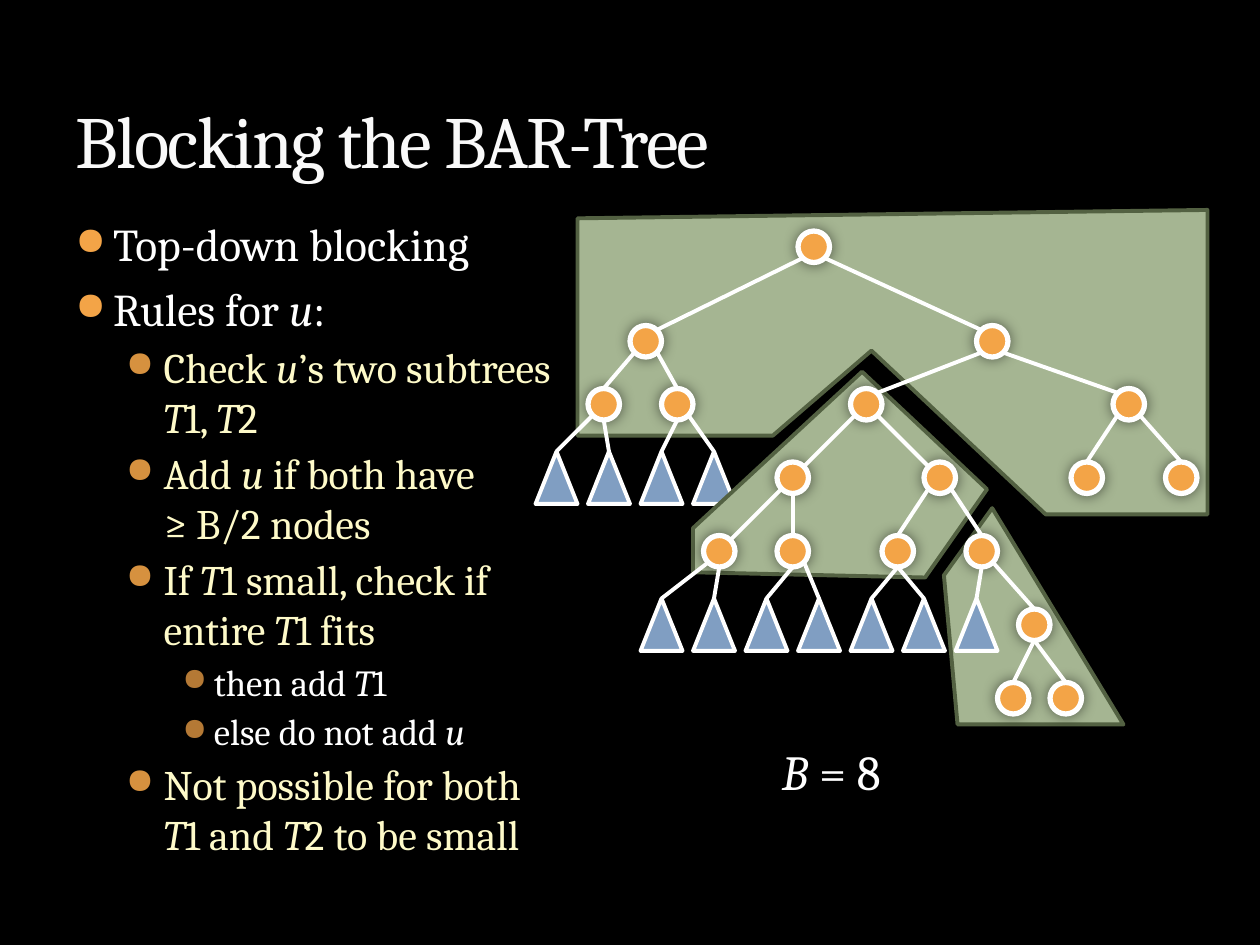
from lxml.etree import SubElement
from pptx import Presentation
from pptx.dml.color import RGBColor
from pptx.enum.shapes import MSO_CONNECTOR as LINE, MSO_SHAPE as SHAPE
from pptx.enum.text import MSO_ANCHOR as ANCHOR, MSO_AUTO_SIZE as AUTO
from pptx.oxml.ns import qn
from pptx.util import Pt

PX = 7620
BLACK = RGBColor(0x00, 0x00, 0x00)
WHITE = RGBColor(0xFF, 0xFF, 0xFF)
TITLE = RGBColor(0xF9, 0xF9, 0xF9)
OUTLINE = RGBColor(0x3C, 0x44, 0x22)
CREAM = RGBColor(0xFE, 0xFA, 0xC9)
ORANGE = RGBColor(0xF3, 0xA4, 0x47)
DARK_ORANGE = RGBColor(0xD6, 0x91, 0x3F)
BROWN = RGBColor(0xB4, 0x79, 0x35)
BLUE = RGBColor(0x80, 0x9E, 0xC2)
GREEN = RGBColor(0xA5, 0xB5, 0x92)
DARK_GREEN = RGBColor(0x53, 0x61, 0x42)

LEVELS = [
    dict(size=26, color=WHITE, before=6, bullet=ORANGE, left=36, hang=36),
    dict(size=24, color=CREAM, before=3, bullet=DARK_ORANGE, left=84, hang=36),
    dict(size=21, color=WHITE, before=3, bullet=BROWN, left=132, hang=30),
]
RULES = [
    (0, "Top-down blocking"),
    (0, "Rules for *u*:"),
    (1, "Check *u*’s two subtrees *T*1, *T*2"),
    (1, "Add *u* if both have\n≥ B/2 nodes"),
    (1, "If *T*1 small, check if entire *T*1 fits"),
    (2, "then add *T*1"),
    (2, "else do not add *u*"),
    (1, "Not possible for both *T*1 and *T*2 to be small"),
]

TOP_BLOCK = [(550, 208), (550, 415), (736, 415), (830, 334), (996, 490), (1150, 490), (1150, 200)]
MIDDLE_BLOCK = [(660, 503), (660, 545), (881, 550), (940, 466), (821, 354)]
RIGHT_BLOCK = [(899, 548), (945, 484), (1070, 690), (912, 690)]

NODE_ROWS = {
    235: {"a": 775},
    325: {"b": 615, "c": 945},
    385: {"d": 575, "e": 645, "f": 825, "g": 1075},
    455: {"h": 755, "i": 895, "j": 1035, "k": 1125},
    525: {"l": 685, "m": 755, "n": 855, "o": 935},
    595: {"p": 985},
    665: {"q": 965, "r": 1015},
}
NODES = {name: (x, y) for y, row in NODE_ROWS.items() for name, x in row.items()}
UPPER_LEAVES = [(530 + 50 * i, 430) for i in range(4)]
LOWER_LEAVES = [(630 + 50 * i, 570) for i in range(7)]
SITES = {"N": (0, -15), "S": (0, 15), "NW": (-11, -11), "NE": (11, -11), "SW": (-11, 11), "SE": (11, 11)}
BRANCHES = [
    "a SE c NW", "a SW b NE", "b SW d N", "b SE e N", "c SW f NE", "c SE g NW",
    "f SE i NW", "f SW h NE", "g SW j N", "g SE k N", "h SW l NE", "h S m N",
    "i SW n N", "i SE o N", "o SE p N", "p S r N", "p S q N",
]
STEMS = ["d SW", "d S", "e S", "e SE", "l SW", "l S", "m S", "m SE", "n S", "n S", "o S"]


def site(name, side):
    (x, y), (dx, dy) = NODES[name], SITES[side]
    return x + dx, y + dy


def add_color(parent, color, alpha=100):
    clr = SubElement(parent, qn("a:srgbClr"), val=str(color))
    if alpha < 100:
        SubElement(clr, qn("a:alpha"), val=str(alpha * 1000))


def write(p, text, size, color, font="Cambria", before=0, bullet=None, left=0, hang=0):
    p.space_before = Pt(before)
    if bullet is not None:
        pPr = p._p.get_or_add_pPr()
        pPr.set("marL", str(left * PX))
        pPr.set("indent", str(-hang * PX))
        add_color(SubElement(pPr, qn("a:buClr")), bullet)
        SubElement(pPr, qn("a:buSzPct"), val="85000")
        SubElement(pPr, qn("a:buChar"), char="●")
    for i, part in enumerate(text.split("*")):
        for j, line in enumerate(part.split("\n")):
            if j:
                p.add_line_break()
            if line:
                r = p.add_run()
                r.text = line
                r.font.name, r.font.size = font, Pt(size)
                r.font.italic = i % 2 == 1
                r.font.color.rgb = color


class Deck:
    def __init__(self):
        self.prs = Presentation()
        self.prs.slide_width, self.prs.slide_height = 1200 * PX, 900 * PX
        self.s = self.prs.slides.add_slide(self.prs.slide_layouts[6])
        self.s.background.fill.solid()
        self.s.background.fill.fore_color.rgb = BLACK

    def style(self, sp, fill, line, width=2.25):
        sp.shadow.inherit = False
        sp.fill.solid()
        sp.fill.fore_color.rgb = fill
        sp.line.color.rgb = line
        sp.line.width = Pt(width)

    def block(self, points):
        builder = self.s.shapes.build_freeform(*points[0], scale=PX)
        builder.add_line_segments(points[1:], close=True)
        self.style(builder.convert_to_shape(), GREEN, DARK_GREEN)

    def node(self, x, y):
        sp = self.s.shapes.add_shape(SHAPE.OVAL, (x - 15) * PX, (y - 15) * PX, 30 * PX, 30 * PX)
        self.style(sp, ORANGE, WHITE, 3)
        effects = sp._element.spPr.find(qn("a:effectLst"))
        glow = SubElement(effects, qn("a:outerShdw"), blurRad=str(Pt(7.5)), dist="0", dir="0")
        add_color(glow, BLACK, 50)

    def leaf(self, x, y):
        sp = self.s.shapes.add_shape(SHAPE.ISOSCELES_TRIANGLE, (x - 20) * PX, y * PX, 40 * PX, 50 * PX)
        self.style(sp, BLUE, WHITE)

    def edge(self, start, end):
        sp = self.s.shapes.add_connector(LINE.STRAIGHT, *(v * PX for v in (*start, *end)))
        sp.line.color.rgb = WHITE
        sp.line.width = Pt(2.25)
        SubElement(sp._element.spPr, qn("a:effectLst"))

    def text(self, x, y, w, h, wrap=True):
        tf = self.s.shapes.add_textbox(x * PX, y * PX, w * PX, h * PX).text_frame
        tf.word_wrap = wrap
        return tf

    def title(self, text):
        tf = self.text(60, 20, 1080, 160)
        tf.vertical_anchor = ANCHOR.BOTTOM
        p = tf.paragraphs[0]
        write(p, text, 42, TITLE)
        rPr = p.runs[0]._r.get_or_add_rPr()
        rPr.set("spc", "-100")
        ln = rPr.makeelement(qn("a:ln"), {"w": str(Pt(0.25))})
        rPr.insert(0, ln)
        add_color(SubElement(ln, qn("a:solidFill")), OUTLINE, 25)

    def bullets(self, items):
        tf = self.text(60, 200, 490, 640)
        for i, (level, text) in enumerate(items):
            p = tf.add_paragraph() if i else tf.paragraphs[0]
            p.level = level
            write(p, text, **LEVELS[level])

    def label(self, text):
        tf = self.text(733, 700, 127, 68, wrap=False)
        tf.auto_size = AUTO.SHAPE_TO_FIT_TEXT
        write(tf.paragraphs[0], text, 28, WHITE)


def main():
    deck = Deck()
    deck.block(RIGHT_BLOCK)
    deck.leaf(*UPPER_LEAVES[-1])
    deck.block(MIDDLE_BLOCK)
    deck.block(TOP_BLOCK)
    deck.bullets(RULES)
    deck.title("Blocking the BAR-Tree")
    for centre in NODES.values():
        deck.node(*centre)
    for branch in BRANCHES:
        parent, out, child, into = branch.split()
        deck.edge(site(parent, out), site(child, into))
    for apex in UPPER_LEAVES[:-1] + LOWER_LEAVES:
        deck.leaf(*apex)
    for stem, apex in zip(STEMS, UPPER_LEAVES + LOWER_LEAVES):
        deck.edge(site(*stem.split()), apex)
    deck.label("*B* = 8")
    deck.prs.save("out.pptx")


if __name__ == "__main__":
    main()
